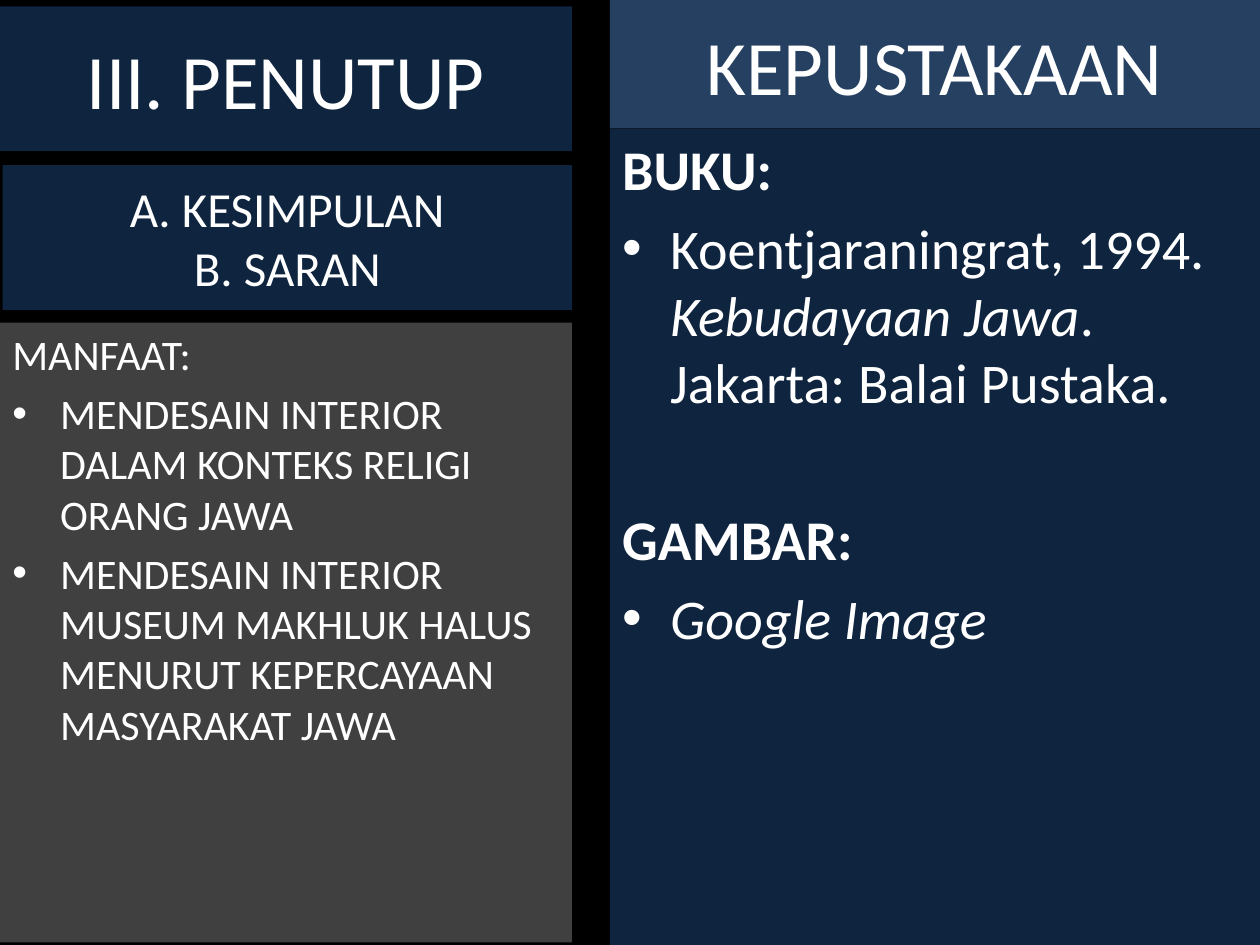
import pptx
import pptx.util
import pptx.dml.color
import pptx.enum.shapes
import pptx.enum.text
from lxml import etree
from dataclasses import dataclass

Inches, Pt = pptx.util.Inches, pptx.util.Pt
ALIGN, ANCHOR = pptx.enum.text.PP_ALIGN, pptx.enum.text.MSO_ANCHOR


@dataclass(frozen=True)
class Theme:
    font: str = "Calibri"
    ground: str = "000000"
    ink: str = "FFFFFF"
    navy: str = "0F243E"
    steel: str = "254061"
    grey: str = "404040"
    heading: int = 44
    subheading: int = 28
    body: int = 24
    reference: int = 32


T = Theme()

# Content: paragraphs are (kind, [(text, style)]); style "b" bold, "i" italic
CLOSING = "III. PENUTUP"
POINTS = "A. KESIMPULAN\vB. SARAN"
REFERENCES = "KEPUSTAKAAN"
BENEFITS = [
    ("plain", [("MANFAAT:", "")]),
    ("bullet", [("MENDESAIN INTERIOR DALAM KONTEKS RELIGI ORANG JAWA", "")]),
    ("bullet", [("MENDESAIN INTERIOR MUSEUM MAKHLUK HALUS MENURUT "
                 "KEPERCAYAAN MASYARAKAT JAWA", "")]),
]
SOURCES = [
    ("plain", [("BUKU:", "b")]),
    ("bullet", [("Koentjaraningrat, 1994. ", ""), ("Kebudayaan Jawa", "i"),
                (". Jakarta: Balai Pustaka.", "")]),
    ("section", [("GAMBAR:", "b")]),
    ("bullet", [("Google Image", "i")]),
]

# Grid: two columns (left, width) on the slide
W, H = 10, 7.5
LEFT, RIGHT = (0, 4.54), (4.84, 5.16)
BAND_TOP, BAND_H, HEAD_H = 0.05, 1.15, 1.02
POINTS_TOP, BENEFITS_TOP = 1.31, 2.56
INDENT = Inches(0.38)


def rgb(value):
    return pptx.dml.color.RGBColor.from_string(value)


def style(r, size, marks=""):
    r.font.name, r.font.size = T.font, Pt(size)
    r.font.color.rgb = rgb(T.ink)
    r.font.bold, r.font.italic = "b" in marks, "i" in marks


def panel(column, top, height, fill, sp=None):
    """Place a filled rectangle, or format the given placeholder as one."""
    box = [Inches(v) for v in (column[0], top, column[1], height)]
    if sp is None:
        sp = s.shapes.add_shape(pptx.enum.shapes.MSO_SHAPE.RECTANGLE, *box)
        sp.shadow.inherit = False
    else:
        sp.left, sp.top, sp.width, sp.height = box
    sp.fill.solid()
    sp.fill.fore_color.rgb = rgb(fill)
    sp.line.fill.background()
    tf = sp.text_frame
    tf.word_wrap = True
    tf.auto_size = pptx.enum.text.MSO_AUTO_SIZE.NONE
    return tf


def heading(tf, text, size):
    tf.text = text
    tf.vertical_anchor = ANCHOR.MIDDLE
    p = tf.paragraphs[0]
    p.alignment = ALIGN.CENTER
    for r in p.runs:
        style(r, size)


def listing(tf, paragraphs, size):
    tf.vertical_anchor = ANCHOR.TOP
    for i, (kind, runs) in enumerate(paragraphs):
        p = tf.add_paragraph() if i else tf.paragraphs[0]
        p.alignment = ALIGN.LEFT
        if i:
            # A section starts one extra line lower
            p.space_before = Pt(size * (1.61 if kind == "section" else 0.2))
        if kind == "bullet":
            pPr = p._p.get_or_add_pPr()
            pPr.set("marL", str(INDENT))
            pPr.set("indent", str(-INDENT))
            ns = pptx.oxml.ns.qn
            etree.SubElement(pPr, ns("a:buFont")).set("typeface", "Arial")
            etree.SubElement(pPr, ns("a:buChar")).set("char", "•")
        for text, marks in runs:
            r = p.add_run()
            r.text = text
            style(r, size, marks)


prs = pptx.Presentation()
prs.slide_width, prs.slide_height = Inches(W), Inches(H)
s = prs.slides.add_slide(prs.slide_layouts[5])
s.background.fill.solid()
s.background.fill.fore_color.rgb = rgb(T.ground)

# Left column: closing chapter
heading(panel((0.02, 4.52), POINTS_TOP, BAND_H, T.navy, s.shapes.title),
        POINTS, T.subheading)
listing(panel(LEFT, BENEFITS_TOP, 4.92, T.grey), BENEFITS, T.body)
heading(panel(LEFT, BAND_TOP, BAND_H, T.navy), CLOSING, T.heading)

# Right column: references
heading(panel(RIGHT, 0, HEAD_H, T.steel), REFERENCES, T.heading)
listing(panel(RIGHT, HEAD_H, H - HEAD_H, T.navy), SOURCES, T.reference)

prs.save("out.pptx")
